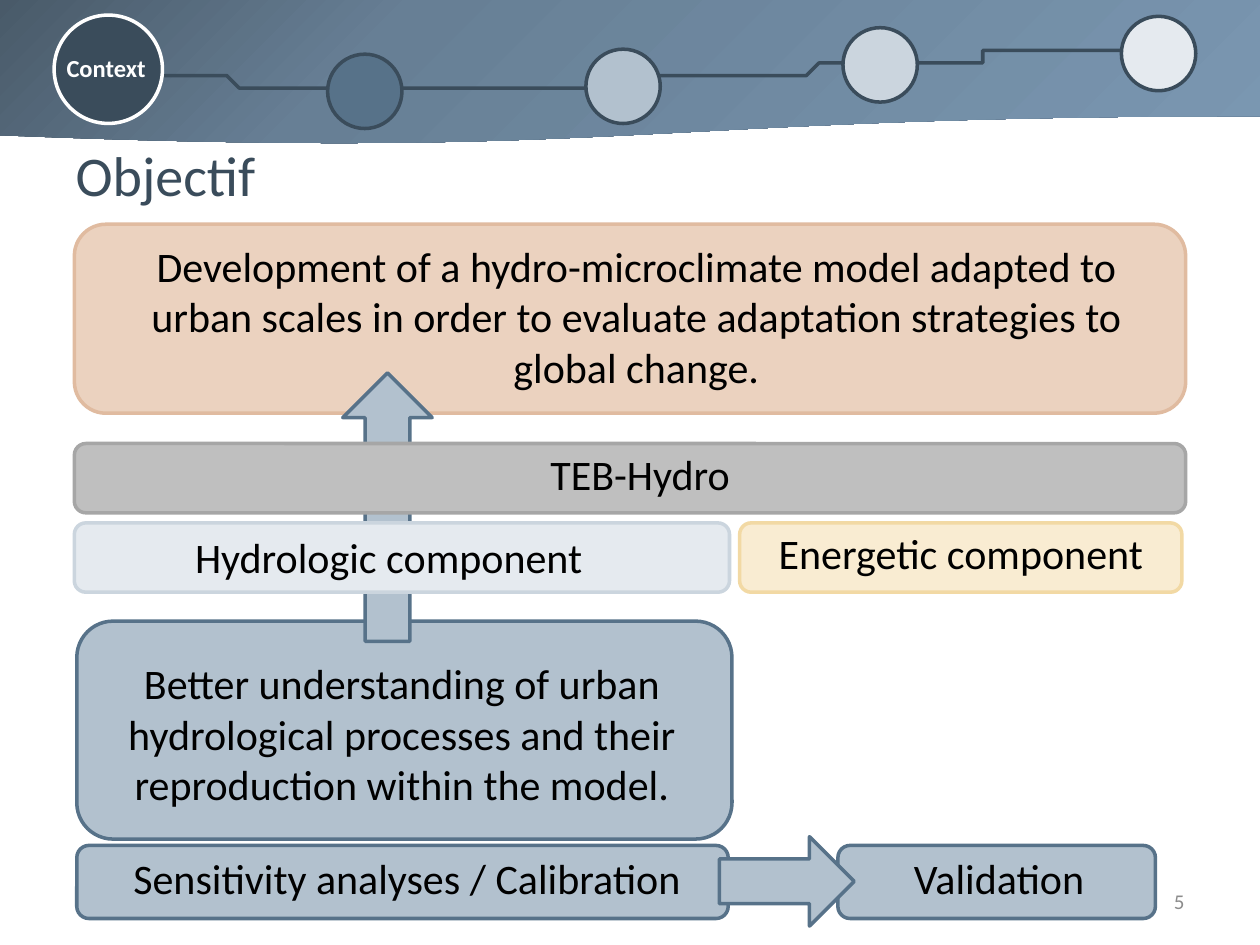
from copy import deepcopy

from pptx import Presentation
from pptx.dml.color import RGBColor
from pptx.enum.shapes import MSO_SHAPE as Shape
from pptx.enum.text import MSO_ANCHOR as Anchor, PP_ALIGN as Align
from pptx.util import Inches, Pt

NAVY = RGBColor(0x3A, 0x4C, 0x5B)
STEEL = RGBColor(0x57, 0x72, 0x89)
MIST = RGBColor(0xB2, 0xC1, 0xCE)
HAZE = RGBColor(0xCB, 0xD5, 0xDE)
PALE = RGBColor(0xE5, 0xEA, 0xEF)
PEACH, PEACH_EDGE = RGBColor(0xEB, 0xD2, 0xBF), RGBColor(0xE0, 0xBB, 0xA0)
CREAM, CREAM_EDGE = RGBColor(0xF9, 0xEC, 0xD2), RGBColor(0xF2, 0xD9, 0xA4)
GREY, GREY_EDGE = RGBColor(0xBF, 0xBF, 0xBF), RGBColor(0xA6, 0xA6, 0xA6)
NUMBER_GREY = RGBColor(0x8C, 0x8C, 0x8C)
BLACK, WHITE = RGBColor(0, 0, 0), RGBColor(0xFF, 0xFF, 0xFF)
BANNER_STOPS = [
    (0, RGBColor(0x49, 0x5A, 0x69)),
    (0.3, RGBColor(0x67, 0x7F, 0x95)),
    (1, RGBColor(0x7A, 0x97, 0xB1)),
]

# The slide is a grid of 100 columns by 75 rows with square cells
CELL = Inches(0.1)
presentation = Presentation()
presentation.slide_width, presentation.slide_height = 100 * CELL, 75 * CELL
slide = presentation.slides.add_slide(presentation.slide_layouts[5])
shapes = slide.shapes


def add_shape(kind, area, fill, line):
    shape = shapes.add_shape(kind, *[round(cells * CELL) for cells in area])
    shape.shadow.inherit = False
    shape.fill.solid()
    shape.fill.fore_color.rgb = fill
    shape.line.color.rgb = line
    shape.line.width = Pt(2)
    return shape


def add_text(text, area, size=24, color=BLACK, bold=False, align=Align.CENTER,
             anchor=Anchor.TOP, holder=None):
    left, top, width, height = [round(cells * CELL) for cells in area]
    box = holder or shapes.add_textbox(left, top, width, height)
    box.left, box.top, box.width, box.height = left, top, width, height
    frame = box.text_frame
    frame.word_wrap = True
    frame.vertical_anchor = anchor
    paragraph = frame.paragraphs[0]
    paragraph.alignment = align
    run = paragraph.add_run()
    run.text = text
    run.font.name = "Calibri"
    run.font.size = Pt(size)
    run.font.bold = bold
    run.font.color.rgb = color


# Slide number
add_text("5", (71.7, 69.5, 23.3, 4), size=12, color=NUMBER_GREY,
         align=Align.RIGHT, anchor=Anchor.MIDDLE)

# Wavy banner with a three-stop gradient
banner = add_shape(Shape.FLOWCHART_DOCUMENT, (0, 0, 100, 11.5), STEEL, STEEL)
banner.line.fill.background()
banner.fill.gradient()
banner.fill.gradient_angle = 315
first_stop = banner.element.xpath(".//a:gs")[0]
first_stop.addnext(deepcopy(first_stop))
for stop, (position, color) in zip(banner.fill.gradient_stops, BANNER_STOPS):
    stop.position = position
    stop.color.rgb = color

# Progress line: cubic curves, each drawn as short steps
STEPS = 16
start = (8.4, 5.4)
curves = [
    [(14.6, 6.1), (20.9, 6.8), (26.9, 7.1)],
    [(32.9, 7.3), (38.7, 7.1), (44.5, 6.9)],
    [(50.3, 6.7), (61.6, 5.8), (61.6, 5.8)],
    [(61.6, 5.8), (78.2, 4.5), (78.2, 4.5)],
    [(83, 4.3), (88, 4.3), (90.2, 4.1)],
]
points = [start]
for curve in curves:
    corners = [points[-1]] + curve
    for step in range(1, STEPS + 1):
        t = step / STEPS
        weights = ((1 - t) ** 3, 3 * t * (1 - t) ** 2, 3 * t ** 2 * (1 - t), t ** 3)
        points.append(tuple(sum(weight * corner[axis] for weight, corner in zip(weights, corners))
                            for axis in (0, 1)))
builder = shapes.build_freeform(*start, scale=CELL)
builder.add_line_segments(points[1:], close=False)
progress_line = builder.convert_to_shape()
progress_line.shadow.inherit = False
progress_line.fill.background()
progress_line.line.color.rgb = NAVY
progress_line.line.width = Pt(2)

# Progress circles: left, top, diameter, fill, line
for left, top, diameter, fill, line in [
    (4.3, 1.2, 8.6, NAVY, WHITE),
    (89, 1.3, 5.9, PALE, NAVY),
    (66.9, 2.2, 5.9, HAZE, NAVY),
    (46.5, 3.9, 5.9, MIST, NAVY),
    (26, 4.3, 5.9, STEEL, NAVY),
]:
    add_shape(Shape.OVAL, (left, top, diameter, diameter), fill, line)
add_text("Context", (4.3, 3.7, 13.4, 3.4), size=14, color=WHITE, bold=True, align=Align.LEFT)

# Title
add_text("Objectif", (5, 7.6, 90, 12.5), size=32, color=NAVY, align=Align.LEFT,
         anchor=Anchor.MIDDLE, holder=shapes.title)

# Diagram from back to front: kind, area, fill, line, text, text area
BOX = Shape.ROUNDED_RECTANGLE
for kind, area, fill, line, text, text_area in [
    (BOX, (5.9, 17.8, 88.2, 15), PEACH, PEACH_EDGE,
     "Development of a hydro-microclimate model adapted to urban scales "
     "in order to evaluate adaptation strategies to global change.",
     (8.4, 18.6, 84.2, 13.1)),
    (BOX, (6.1, 49.3, 52, 17.3), MIST, STEEL,
     "Better understanding of urban hydrological processes "
     "and their reproduction within the model.",
     (6.7, 51.7, 50.4, 13.1)),
    (BOX, (58.7, 41.5, 35.1, 5.5), CREAM, CREAM_EDGE,
     "Energetic component", (55.5, 41.4, 41.5, 5)),
    (Shape.UP_ARROW, (27.2, 29.6, 7.1, 21.3), MIST, STEEL, None, None),
    (BOX, (5.9, 41.5, 52, 5.5), PALE, HAZE,
     "Hydrologic component", (10.1, 41.7, 41.5, 5)),
    (BOX, (5.9, 35.2, 88.2, 5.5), GREY, GREY_EDGE,
     "TEB-Hydro", (8.7, 35.1, 84.2, 5)),
    (BOX, (6.1, 67.1, 51.7, 5.8), MIST, STEEL,
     "Sensitivity analyses / Calibration", (6.7, 67.2, 51.2, 5)),
    (BOX, (66.5, 67.1, 25.2, 5.8), MIST, STEEL,
     "Validation", (66.5, 67.2, 25.6, 5)),
    (Shape.RIGHT_ARROW, (57.1, 66.4, 10.7, 7.1), MIST, STEEL, None, None),
]:
    add_shape(kind, area, fill, line)
    if text:
        add_text(text, text_area)

presentation.save("out.pptx")
